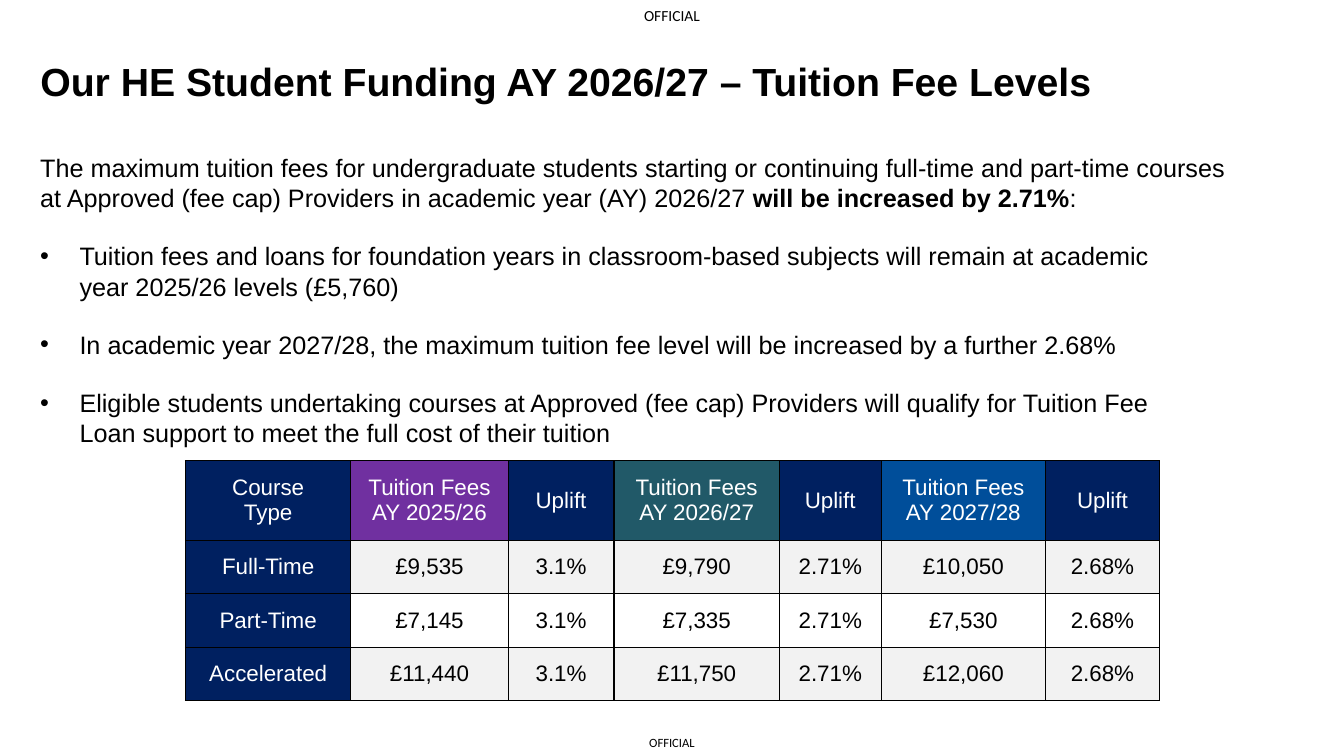
from lxml import etree
from pptx import Presentation
from pptx.dml.color import RGBColor
from pptx.enum.text import MSO_ANCHOR, MSO_AUTO_SIZE, PP_ALIGN
from pptx.oxml.ns import qn
from pptx.util import Inches, Pt

BLACK = RGBColor(0x00, 0x00, 0x00)
WHITE = RGBColor(0xFF, 0xFF, 0xFF)
NAVY = RGBColor(0x00, 0x20, 0x60)
PURPLE = RGBColor(0x70, 0x30, 0xA0)
TEAL = RGBColor(0x21, 0x59, 0x68)
BLUE = RGBColor(0x00, 0x4E, 0x9A)
GREY = RGBColor(0xF2, 0xF2, 0xF2)
LEFT, CENTER = PP_ALIGN.LEFT, PP_ALIGN.CENTER
TOP, MIDDLE = MSO_ANCHOR.TOP, MSO_ANCHOR.MIDDLE
NO_AUTOFIT = MSO_AUTO_SIZE.NONE


def style(paragraph, size, color=BLACK, align=LEFT, font="Arial", bold=False):
    paragraph.alignment = align
    for run in paragraph.runs:
        run.font.name = font
        run.font.size = Pt(size)
        run.font.bold = bold
        run.font.color.rgb = color


def add_borders(cell):
    properties = cell._tc.get_or_add_tcPr()
    for side in ("a:lnL", "a:lnR", "a:lnT", "a:lnB"):
        line = etree.SubElement(properties, qn(side), w=str(Pt(1)))
        fill = etree.SubElement(line, qn("a:solidFill"))
        etree.SubElement(fill, qn("a:srgbClr"), val=str(BLACK))


prs = Presentation()
prs.slide_width, prs.slide_height = Inches(13.33), Inches(7.5)
slide = prs.slides.add_slide(prs.slide_layouts[5])

# Classification markings at foot and head
for left, top, width, height, size in ((6.3, 7.23, 0.73, 0.27, 9), (6.23, 0, 0.87, 0.31, 11)):
    marking = slide.shapes.add_textbox(Inches(left), Inches(top), Inches(width), Inches(height))
    frame = marking.text_frame
    frame.margin_left = frame.margin_right = frame.margin_top = frame.margin_bottom = 0
    frame.vertical_anchor = MIDDLE
    frame.text = "OFFICIAL"
    style(frame.paragraphs[0], size, align=CENTER, font="Calibri")

# Title
title = slide.shapes.title
title.left, title.top = Inches(0.3), Inches(0.48)
title.width, title.height = Inches(11.5), Inches(0.71)
title.text_frame.text = "Our HE Student Funding AY 2026/27 – Tuition Fee Levels"
title.text_frame.auto_size = NO_AUTOFIT
title.text_frame.vertical_anchor = MIDDLE
title.text_frame.paragraphs[0].line_spacing = 0.9
style(title.text_frame.paragraphs[0], 28, bold=True)

# Introduction and bullets: text runs, bulleted, space after
INCREASE = "will be increased by 2.71%"
body_paragraphs = [
    (["The maximum tuition fees for undergraduate students starting or continuing "
      "full-time and part-time courses"], False, 0),
    (["at Approved (fee cap) Providers in academic year (AY) 2026/27 ", INCREASE, ":"], False, 20),
    (["Tuition fees and loans for foundation years in classroom-based subjects will remain "
      "at academic\vyear 2025/26 levels (£5,760)"], True, 20),
    (["In academic year 2027/28, the maximum tuition fee level will be increased by a "
      "further 2.68%"], True, 20),
    (["Eligible students undertaking courses at Approved (fee cap) Providers will qualify "
      "for Tuition Fee\vLoan support to meet the full cost of their tuition"], True, 0),
]
body = slide.shapes.add_textbox(Inches(0.3), Inches(1.46), Inches(12.22), Inches(4.91)).text_frame
body.word_wrap = True
body.vertical_anchor = TOP
for index, (texts, bulleted, space_after) in enumerate(body_paragraphs):
    paragraph = body.add_paragraph() if index else body.paragraphs[0]
    paragraph.text = texts[0]
    for text in texts[1:]:
        paragraph.add_run().text = text
    paragraph.space_after = Pt(space_after)
    properties = paragraph._p.get_or_add_pPr()
    properties.set("marL", str(Inches(0.39)))
    properties.set("indent", str(-Inches(0.39)))
    if bulleted:
        etree.SubElement(properties, qn("a:buFont"), typeface="Arial")
        etree.SubElement(properties, qn("a:buChar"), char="•")
    style(paragraph, 18)
    for run in paragraph.runs:
        run.font.bold = run.text == INCREASE

# Fee table
fees = [
    ["Course\nType", "Tuition Fees\nAY 2025/26", "Uplift", "Tuition Fees\nAY 2026/27", "Uplift",
     "Tuition Fees\nAY 2027/28", "Uplift"],
    ["Full-Time", "£9,535", "3.1%", "£9,790", "2.71%", "£10,050", "2.68%"],
    ["Part-Time", "£7,145", "3.1%", "£7,335", "2.71%", "£7,530", "2.68%"],
    ["Accelerated", "£11,440", "3.1%", "£11,750", "2.71%", "£12,060", "2.68%"],
]
header_fills = [NAVY, PURPLE, NAVY, TEAL, NAVY, BLUE, NAVY]
column_widths = [1.64, 1.56, 1.05, 1.64, 1.01, 1.63, 1.13]
row_heights = [0.79, 0.53, 0.53, 0.53]
fee_table = slide.shapes.add_table(len(fees), len(column_widths), Inches(1.84), Inches(4.57),
                                   Inches(9.65), Inches(2.37)).table
for column, width in zip(fee_table.columns, column_widths):
    column.width = Inches(width)
for row, height in zip(fee_table.rows, row_heights):
    row.height = Inches(height)
for r, row_texts in enumerate(fees):
    for c, text in enumerate(row_texts):
        cell = fee_table.cell(r, c)
        cell.text = text
        cell.vertical_anchor = MIDDLE
        add_borders(cell)
        cell.fill.solid()
        if r == 0:
            cell.fill.fore_color.rgb = header_fills[c]
        elif c == 0:
            cell.fill.fore_color.rgb = NAVY
        else:
            cell.fill.fore_color.rgb = GREY if r % 2 else WHITE
        for paragraph in cell.text_frame.paragraphs:
            style(paragraph, 16, BLACK if r and c else WHITE, CENTER)

prs.save("out.pptx")
